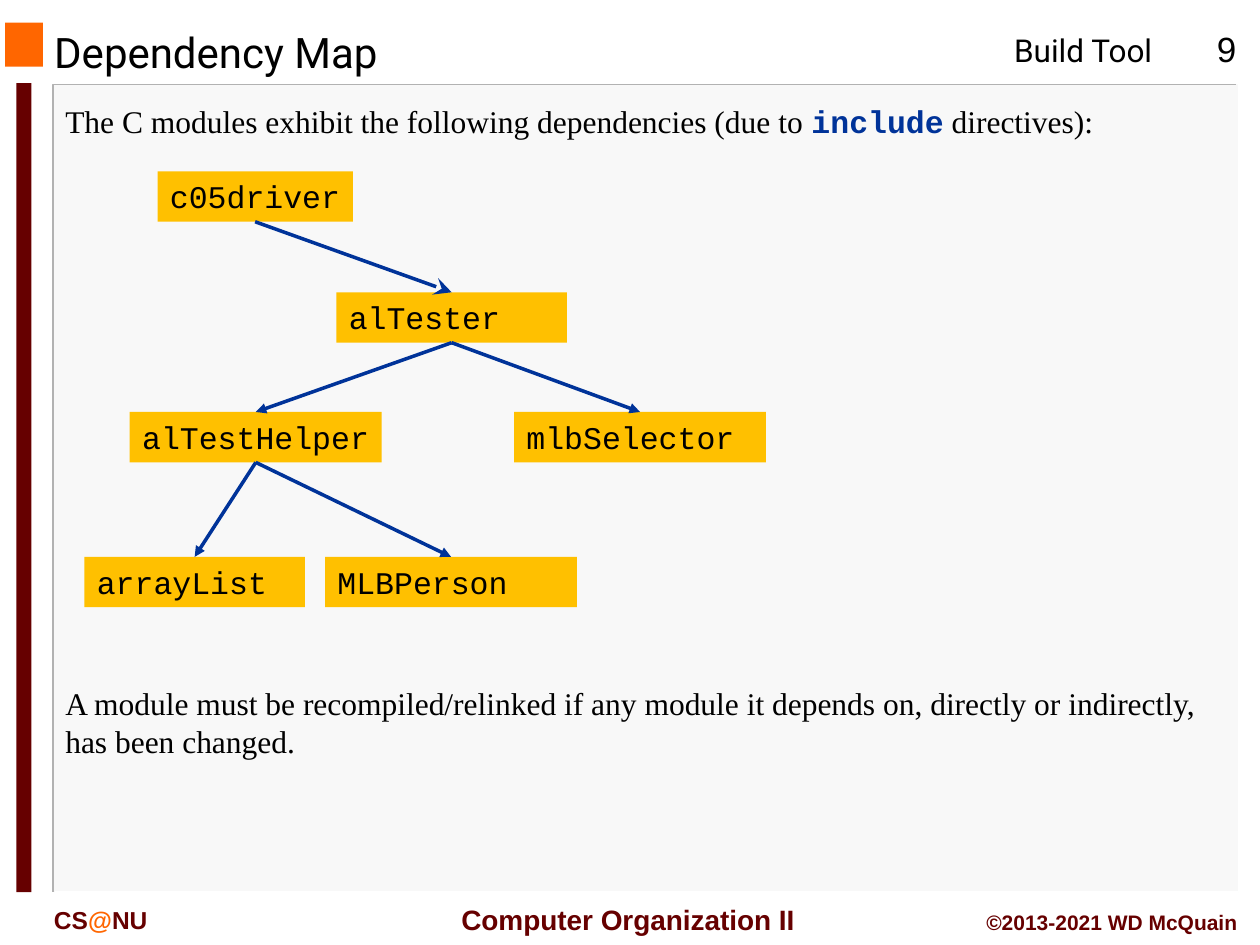
from lxml import etree
from pptx import Presentation
from pptx.dml.color import RGBColor
from pptx.enum import shapes, text
from pptx.oxml import ns
from pptx import util as u

PX = 9144
HUES = {
    "ink": "000000", "panel": "F8F8F8", "edge": "B2B2B2", "white": "FFFFFF",
    "orange": "FF6600", "maroon": "660000", "gold": "FFC000", "blue": "003399",
}
LEFT, MID, RIGHT = (getattr(text.PP_ALIGN, n) for n in ("LEFT", "CENTER", "RIGHT"))
TOP, CENTRE = text.MSO_ANCHOR.TOP, text.MSO_ANCHOR.MIDDLE
SERIF, MONO, SANS, HEAD = "Times New Roman", "Courier New", "Arial", "Roboto"


def hue(name):
    return RGBColor.from_string(HUES[name])


def px(*vals):
    return [u.Emu(v * PX) for v in vals]


def write(shape, runs, size=18, font=SERIF, color="ink", bold=False,
          align=LEFT, anchor=TOP, wrap=True, fit=True):
    frame = shape.text_frame
    frame.word_wrap = wrap
    frame.vertical_anchor = anchor
    kind = text.MSO_AUTO_SIZE
    frame.auto_size = kind.SHAPE_TO_FIT_TEXT if fit else kind.NONE
    para = frame.paragraphs[0]
    para.alignment = align
    for part in [runs] if isinstance(runs, str) else runs:
        words, own = (part, {}) if isinstance(part, str) else part
        run = para.add_run()
        run.text = words
        run.font.size = u.Pt(size)
        run.font.name = own.get("font", font)
        run.font.bold = own.get("bold", bold)
        run.font.color.rgb = hue(own.get("color", color))


def label(slide, box, runs, **style):
    write(slide.shapes.add_textbox(*px(*box)), runs, **style)


def block(slide, box, color):
    shape = slide.shapes.add_shape(shapes.MSO_SHAPE.RECTANGLE, *px(*box))
    shape.shadow.inherit = False
    shape.fill.solid()
    shape.fill.fore_color.rgb = hue(color)
    shape.line.fill.background()
    return shape


def edge(slide, points, color):
    build = slide.shapes.build_freeform(*points[0], scale=PX)
    build.add_line_segments(points[1:], close=False)
    shape = build.convert_to_shape()
    shape.shadow.inherit = False
    shape.fill.background()
    shape.line.color.rgb = hue(color)
    shape.line.width = u.Pt(1)


def panel(slide, box):
    x, y, w, h = box
    block(slide, box, "panel")
    edge(slide, [(x + w - 2, y), (x - 1, y), (x - 1, y + h)], "edge")
    edge(slide, [(x + w, y), (x + w, y + h), (x + 1, y + h)], "white")
    block(slide, (x - 30, y - 1, 12, h + 1), "maroon")


def header(slide, box):
    x, y, w, h = box
    block(slide, (x, y, 30, h), "orange")
    title = slide.shapes.title
    title.left, title.top, title.width, title.height = px(x + 29, y + 4, 633, 38)
    write(title, "Dependency Map", size=24, font=HEAD, anchor=CENTRE, fit=False)
    label(slide, (x + w - 205, y + 2, 145, 40), "Build Tool", font=HEAD, wrap=False)
    label(slide, (x + w - 60, y - 1, 67, 43), "9", size=20, font=SANS, align=MID)


def footer(slide, box):
    x, y, w, h = box
    style = dict(font=SANS, color="maroon", bold=True)
    label(slide, (x, y + 2, 150, 33), ["CS", ("@", {"color": "orange"}), "NU"],
          size=14, **style)
    label(slide, (x + 318, y, 295, h), "Computer Organization II", size=16,
          align=MID, anchor=CENTRE, wrap=False, **style)
    label(slide, (x + w - 250, y + 6, 250, 30), "©2013-2021 WD McQuain", size=12,
          align=RIGHT, **style)


def arrow(slide, start, end, head, size):
    line = slide.shapes.add_connector(shapes.MSO_CONNECTOR.STRAIGHT, 0, 0, 0, 0)
    line.begin_connect(start, 2)
    line.end_connect(end, 0)
    line.line.color.rgb = hue("blue")
    line.line.width = u.Pt(2)
    tip = etree.SubElement(line.line._get_or_add_ln(), ns.qn("a:tailEnd"))
    for key, val in (("type", head), ("w", size), ("len", size)):
        tip.set(key, val)
    etree.SubElement(line._element.spPr, ns.qn("a:effectLst"))


def graph(slide, box):
    x, y, w, h = box
    nodes = {
        "c05driver": (58, 0, 155),
        "alTester": (200, 96, 183),
        "alTestHelper": (36, 191, 200),
        "mlbSelector": (341, 191, 200),
        "arrayList": (0, 306, 175),
        "MLBPerson": (191, 306, 200),
    }
    links = [
        ("c05driver", "alTester", "stealth", "lg"),
        ("alTester", "alTestHelper", "triangle", "med"),
        ("alTester", "mlbSelector", "triangle", "med"),
        ("alTestHelper", "arrayList", "triangle", "med"),
        ("alTestHelper", "MLBPerson", "triangle", "med"),
    ]
    made = {}
    for name, (dx, dy, wide) in nodes.items():
        made[name] = block(slide, (x + dx, y + dy, wide, 40), "gold")
        write(made[name], name, font=MONO)
    for start, end, head, size in links:
        arrow(slide, made[start], made[end], head, size)


def body(slide, box):
    x, y, w, h = box
    code = dict(font=MONO, color="blue", bold=True)
    label(slide, (x, y, w, 40), [
        "The C modules exhibit the following dependencies (due to ",
        ("include", code), " directives):"])
    graph(slide, (x + 25, y + 60, 541, 346))
    label(slide, (x, y + 462, w, 71),
          "A module must be recompiled/relinked if any module it depends on, "
          "directly or indirectly, has been changed.")


def main():
    deck = Presentation()
    deck.slide_width, deck.slide_height = px(1000, 750)
    slide = deck.slides.add_slide(deck.slide_layouts[5])
    panel(slide, (43, 67, 940, 641))
    header(slide, (4, 18, 996, 35))
    footer(slide, (33, 711, 959, 37))
    body(slide, (42, 76, 933, 533))
    deck.save("out.pptx")


if __name__ == "__main__":
    main()
